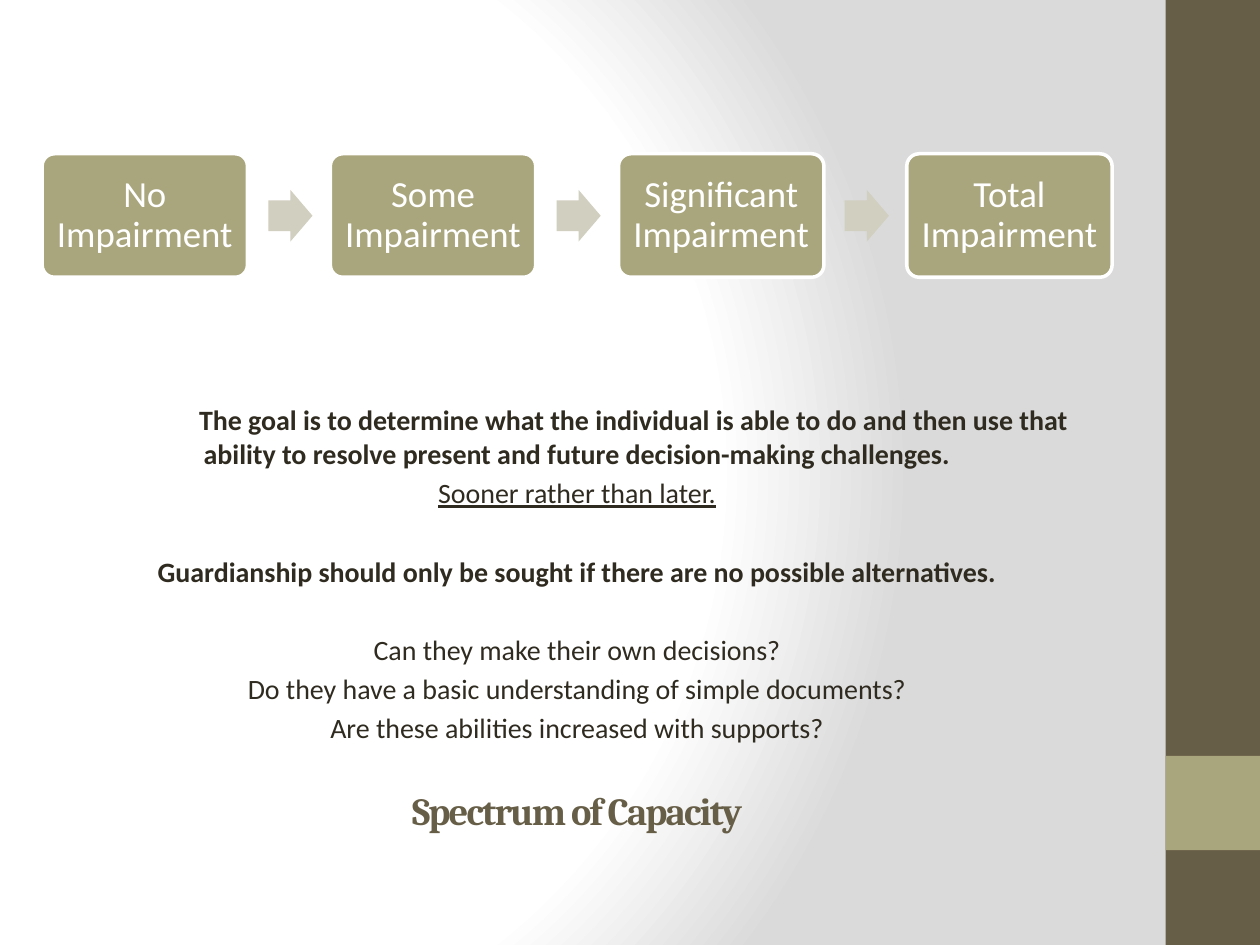
import lxml.etree
import pptx
import pptx.dml.color
import pptx.enum.shapes
import pptx.enum.text
import pptx.oxml
import pptx.oxml.ns
import pptx.util

Cm = pptx.util.Cm
Pt = pptx.util.Pt
SHAPE = pptx.enum.shapes.MSO_SHAPE
ANCHOR = pptx.enum.text.MSO_ANCHOR
COLORS = {
    "white": "FFFFFF",
    "shade": "DADADA",
    "brown": "675E47",
    "olive": "A9A57C",
    "arrow": "D1CFBF",
    "ink": "2F2B20",
}


def rgb(name):
    return pptx.dml.color.RGBColor.from_string(COLORS[name])


def add_text(tf, text, first=False, size=16, font="Calibri", color="ink", bold=False,
             underline=False, before=0, line=1.0, spacing=None, tab=None):
    p = tf.paragraphs[0] if first else tf.add_paragraph()
    p.alignment = pptx.enum.text.PP_ALIGN.CENTER
    p.space_before = Pt(before)
    p.line_spacing = line
    if tab is not None:
        p._p.get_or_add_pPr().set("defTabSz", str(Cm(tab)))
    r = p.add_run()
    r.text = text
    r.font.size = Pt(size)
    r.font.name = font
    r.font.bold = bold
    r.font.underline = underline
    r.font.color.rgb = rgb(color)
    if spacing is not None:
        r.font._element.set("spc", str(spacing))


class Deck:
    def __init__(self, width, height):
        self.prs = pptx.Presentation()
        self.prs.slide_width = Cm(width)
        self.prs.slide_height = Cm(height)
        self.s = self.prs.slides.add_slide(self.prs.slide_layouts[6])

    def background(self, stops, center):
        fill = self.s.background.fill
        fill.solid()
        old = self.s._element.find(".//" + pptx.oxml.ns.qn("p:bgPr"))[0]
        gs = "".join(
            f'<a:gs pos="{pos * 1000}"><a:srgbClr val="{COLORS[name]}"/></a:gs>'
            for pos, name in stops)
        rect = " ".join(f'{side}="{v * 1000}"' for side, v in zip("ltrb", center))
        old.getparent().replace(old, pptx.oxml.parse_xml(
            f'<a:gradFill {pptx.oxml.ns.nsdecls("a")} rotWithShape="1"><a:gsLst>{gs}</a:gsLst>'
            f'<a:path path="circle"><a:fillToRect {rect}/></a:path></a:gradFill>'))

    def shape(self, kind, x, y, w, h, fill, line=None, adjust=()):
        sp = self.s.shapes.add_shape(kind, Cm(x), Cm(y), Cm(w), Cm(h))
        sp.shadow.inherit = False
        sp.fill.solid()
        sp.fill.fore_color.rgb = rgb(fill)
        if line:
            sp.line.color.rgb = rgb(line)
            sp.line.width = Pt(2)
        else:
            sp.line.fill.background()
        for i, value in enumerate(adjust):
            sp.adjustments[i] = value
        return sp

    def stage(self, x, y, w, h, text):
        sp = self.shape(SHAPE.ROUNDED_RECTANGLE, x, y, w, h, "olive", "white", [0.1])
        tf = sp.text_frame
        tf.word_wrap = True
        tf.vertical_anchor = ANCHOR.MIDDLE
        tf.margin_left = tf.margin_right = Cm(0.2)
        add_text(tf, text, first=True, size=21, color="white", line=0.9)

    def text_box(self, x, y, w, h, anchor=ANCHOR.TOP):
        tf = self.s.shapes.add_textbox(Cm(x), Cm(y), Cm(w), Cm(h)).text_frame
        tf.word_wrap = True
        tf.vertical_anchor = anchor
        return tf


def main():
    deck = Deck(25.4, 19.05)
    deck.background([(0, "white"), (75, "white"), (100, "shade")], (20, 50, 100, 50))
    deck.shape(SHAPE.RECTANGLE, 23.5, 0, 1.9, 19.05, "brown")
    deck.shape(SHAPE.RECTANGLE, 23.5, 15.24, 1.9, 1.9, "olive")

    tf = deck.text_box(0.84, 15.27, 21.59, 1.65, ANCHOR.BOTTOM)
    add_text(tf, "Spectrum of Capacity", first=True, size=22, font="Cambria",
             color="brown", bold=True, spacing=-100)

    near, far = 3.2, 25.6
    body = [
        ("\tThe goal is to determine what the individual is able to do and then use that "
         "\tability to resolve present and future decision-making challenges.",
         {"first": True, "bold": True, "tab": 2.54}),
        ("Sooner rather than later.", {"underline": True, "before": near}),
        ("Guardianship should only be sought if there are no possible alternatives.",
         {"bold": True, "before": far}),
        ("Can they make their own decisions?", {"before": far}),
        ("Do they have a basic understanding of simple documents?", {"before": near}),
        ("Are these abilities increased with supports?", {"before": near}),
    ]
    tf = deck.text_box(0.84, 8, 21.59, 7)
    for text, style in body:
        add_text(tf, text, **style)

    left, pitch = 0.85, 5.81
    levels = ["No", "Some", "Significant", "Total"]
    for i, level in enumerate(levels):
        x = left + i * pitch
        deck.stage(x, 3.1, 4.14, 2.49, f"{level} Impairment")
        if i < len(levels) - 1:
            deck.shape(SHAPE.RIGHT_ARROW, x + 4.56, 3.83, 0.89, 1.04, "arrow",
                       adjust=[0.6, 0.5])

    deck.prs.save("out.pptx")


if __name__ == "__main__":
    main()
